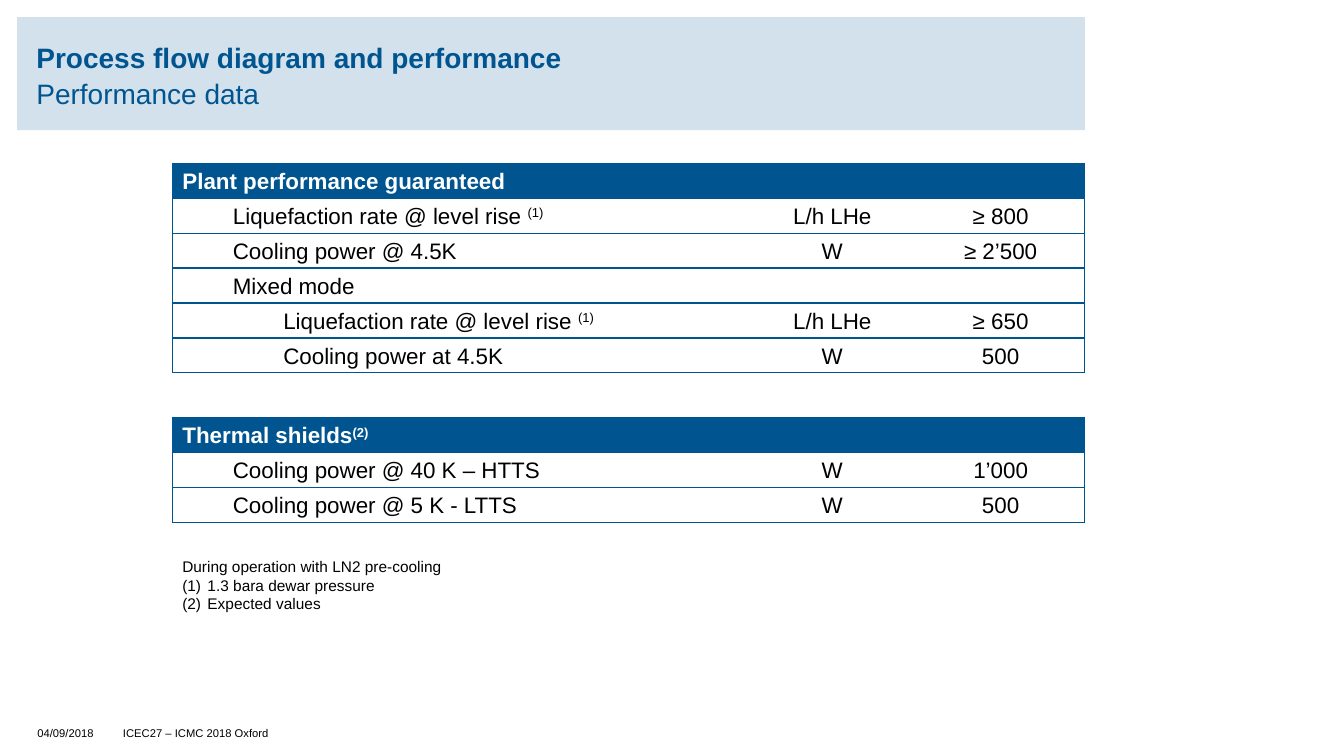
import pptx
import pptx.dml.color
import pptx.enum.shapes
import pptx.enum.text
import pptx.oxml
import pptx.oxml.ns
import pptx.util
from pptx.dml.color import RGBColor
from pptx.util import Inches

BLUE = RGBColor(0x00, 0x55, 0x91)
PALE_BLUE = RGBColor(0xD2, 0xE1, 0xEB)
WHITE = RGBColor(0xFF, 0xFF, 0xFF)
BLACK = RGBColor(0, 0, 0)

ALIGN = pptx.enum.text.PP_ALIGN
ANCHOR = pptx.enum.text.MSO_ANCHOR
LEFT, WIDTH = Inches(1.71), Inches(9.06)
COLUMN_WIDTHS = (5.71, 1.67, 1.67)
ROW_HEIGHT = Inches(2.08 / 6)

# Each row: indent level, label, superscript note, unit, value
PLANT_ROWS = [
    (0, "Plant performance guaranteed", "", "", ""),
    (1, "Liquefaction rate @ level rise ", "(1)", "L/h LHe", "≥ 800"),
    (1, "Cooling power @ 4.5K", "", "W", "≥ 2’500"),
    (1, "Mixed mode", "", "", ""),
    (2, "Liquefaction rate @ level rise ", "(1)", "L/h LHe", "≥ 650"),
    (2, "Cooling power at 4.5K", "", "W", "500"),
]
SHIELD_ROWS = [
    (0, "Thermal shields", "(2)", "", ""),
    (1, "Cooling power @ 40 K – HTTS", "", "W", "1’000"),
    (1, "Cooling power @ 5 K - LTTS", "", "W", "500"),
]


def set_font(paragraph, size, color, bold=False):
    font = paragraph.font
    font.name = "Arial"
    font.size = pptx.util.Pt(size)
    font.bold = bold
    font.color.rgb = color


def set_indent(paragraph, margin, first_line=0):
    properties = paragraph._p.get_or_add_pPr()
    properties.set("marL", str(Inches(margin)))
    properties.set("indent", str(Inches(first_line)))


def set_borders(cell, sides):
    """Draw blue lines on the given sides (L, R, T, B) and none on the others."""
    properties = cell._tc.get_or_add_tcPr()
    for position, side in enumerate("LRTB"):
        paint = (f'<a:solidFill><a:srgbClr val="{BLUE}"/></a:solidFill>'
                 if side in sides else "<a:noFill/>")
        properties.insert(position, pptx.oxml.parse_xml(
            f'<a:ln{side} {pptx.oxml.ns.nsdecls("a")} w="{pptx.util.Pt(1)}">'
            f"{paint}</a:ln{side}>"))


def add_title(slide, heading, subheading):
    banner = slide.shapes.add_shape(
        pptx.enum.shapes.MSO_SHAPE.RECTANGLE,
        Inches(0.17), Inches(0.17), Inches(10.59), Inches(1.12))
    banner.shadow.inherit = False
    banner.fill.solid()
    banner.fill.fore_color.rgb = PALE_BLUE
    banner.line.fill.background()
    frame = banner.text_frame
    frame.word_wrap = True
    frame.vertical_anchor = ANCHOR.MIDDLE
    frame.margin_left = frame.margin_right = Inches(0.19)
    frame.margin_top = frame.margin_bottom = 0
    for paragraph, text, bold in (
            (frame.paragraphs[0], heading, True),
            (frame.add_paragraph(), subheading, False)):
        paragraph.text = text
        paragraph.alignment = ALIGN.LEFT
        paragraph.line_spacing = 1.1
        set_font(paragraph, 20, BLUE, bold)


def add_performance_table(slide, top, rows):
    table = slide.shapes.add_table(
        len(rows), len(COLUMN_WIDTHS), LEFT, top, WIDTH,
        ROW_HEIGHT * len(rows)).table
    table.first_row = table.horz_banding = False
    for column, width in zip(table.columns, COLUMN_WIDTHS):
        column.width = Inches(width)
    for row, (level, label, note, unit, value) in zip(table.rows, rows):
        row.height = ROW_HEIGHT
        is_header = level == 0
        for cell, text, sides in zip(
                row.cells, (label, unit, value), ("LTB", "TB", "RTB")):
            cell.fill.solid()
            cell.fill.fore_color.rgb = BLUE if is_header else WHITE
            set_borders(cell, sides)
            cell.margin_top = cell.margin_bottom = Inches(0.03)
            cell.vertical_anchor = ANCHOR.MIDDLE
            paragraph = cell.text_frame.paragraphs[0]
            paragraph.line_spacing = 1.1
            if text:
                paragraph.add_run().text = text
            if text == label:
                set_indent(paragraph, level * 0.5)
                if note:
                    superscript = paragraph.add_run()
                    superscript.text = note
                    superscript.font._element.set("baseline", "30000")
            else:
                paragraph.alignment = ALIGN.CENTER
            set_font(paragraph, 16, WHITE if is_header else BLACK, is_header)


def add_notes_block(slide, intro, notes):
    frame = slide.shapes.add_textbox(
        LEFT, Inches(5.48), WIDTH, Inches(0.66)).text_frame
    frame.word_wrap = True
    frame.text = intro
    set_font(frame.paragraphs[0], 11, BLACK)
    for note in notes:
        paragraph = frame.add_paragraph()
        paragraph.text = note
        set_indent(paragraph, 0.25, -0.25)
        paragraph._p.get_or_add_pPr().append(pptx.oxml.parse_xml(
            f'<a:buAutoNum {pptx.oxml.ns.nsdecls("a")} type="arabicParenBoth"/>'))
        set_font(paragraph, 11, BLACK)


def add_footer(slide, left, width, text):
    frame = slide.shapes.add_textbox(
        Inches(left), Inches(7.06), Inches(width), Inches(0.28)).text_frame
    frame.word_wrap = True
    frame.vertical_anchor = ANCHOR.BOTTOM
    frame.margin_left = frame.margin_right = 0
    frame.margin_top = frame.margin_bottom = 0
    frame.text = text
    set_font(frame.paragraphs[0], 8, BLACK)


def main():
    presentation = pptx.Presentation()
    presentation.slide_width = Inches(13.33)
    presentation.slide_height = Inches(7.5)
    slide = presentation.slides.add_slide(presentation.slide_layouts[6])

    # Title banner
    add_title(slide, "Process flow diagram and performance", "Performance data")

    # Performance tables and their notes
    add_performance_table(slide, Inches(1.62), PLANT_ROWS)
    add_performance_table(slide, Inches(4.14), SHIELD_ROWS)
    add_notes_block(slide, "During operation with LN2 pre-cooling",
                    ["1.3 bara dewar pressure", "Expected values"])

    # Footer
    add_footer(slide, 1.22, 11.27, "ICEC27 – ICMC 2018 Oxford")
    add_footer(slide, 0.37, 0.79, "04/09/2018")

    presentation.save("out.pptx")


if __name__ == "__main__":
    main()
